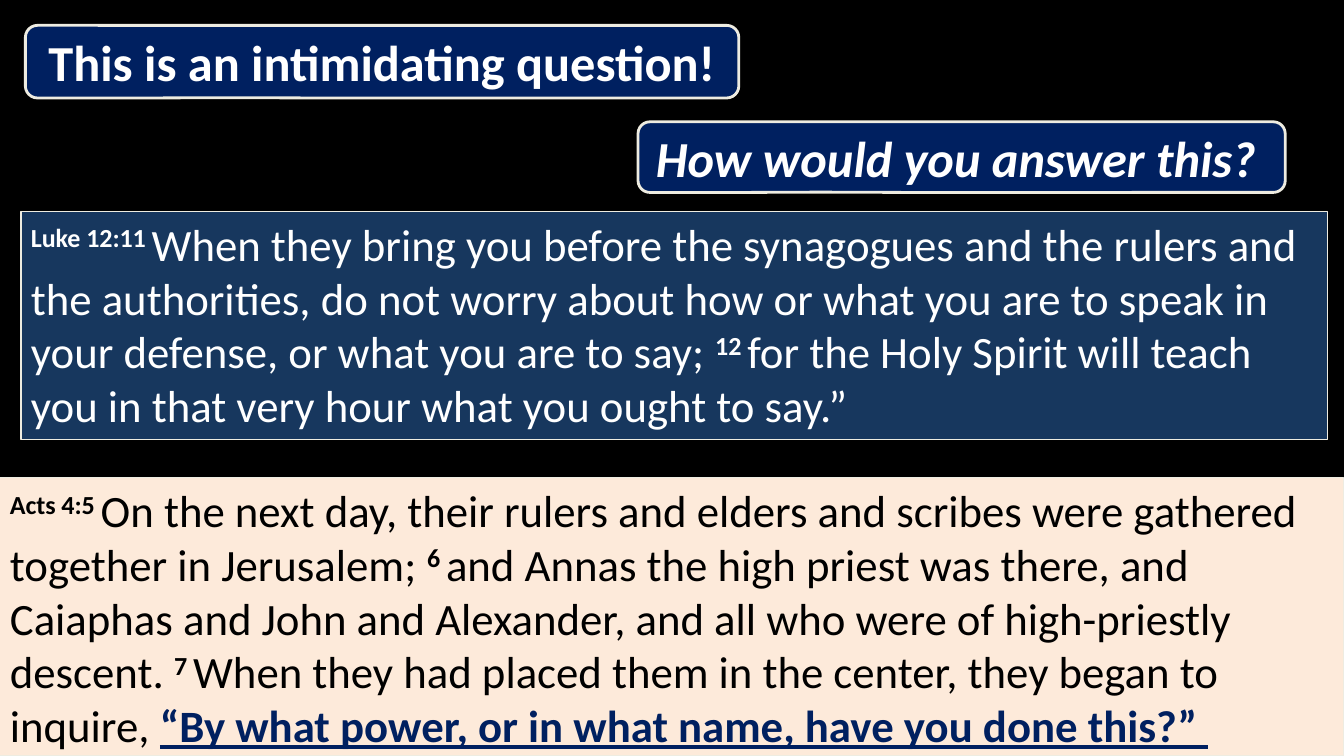
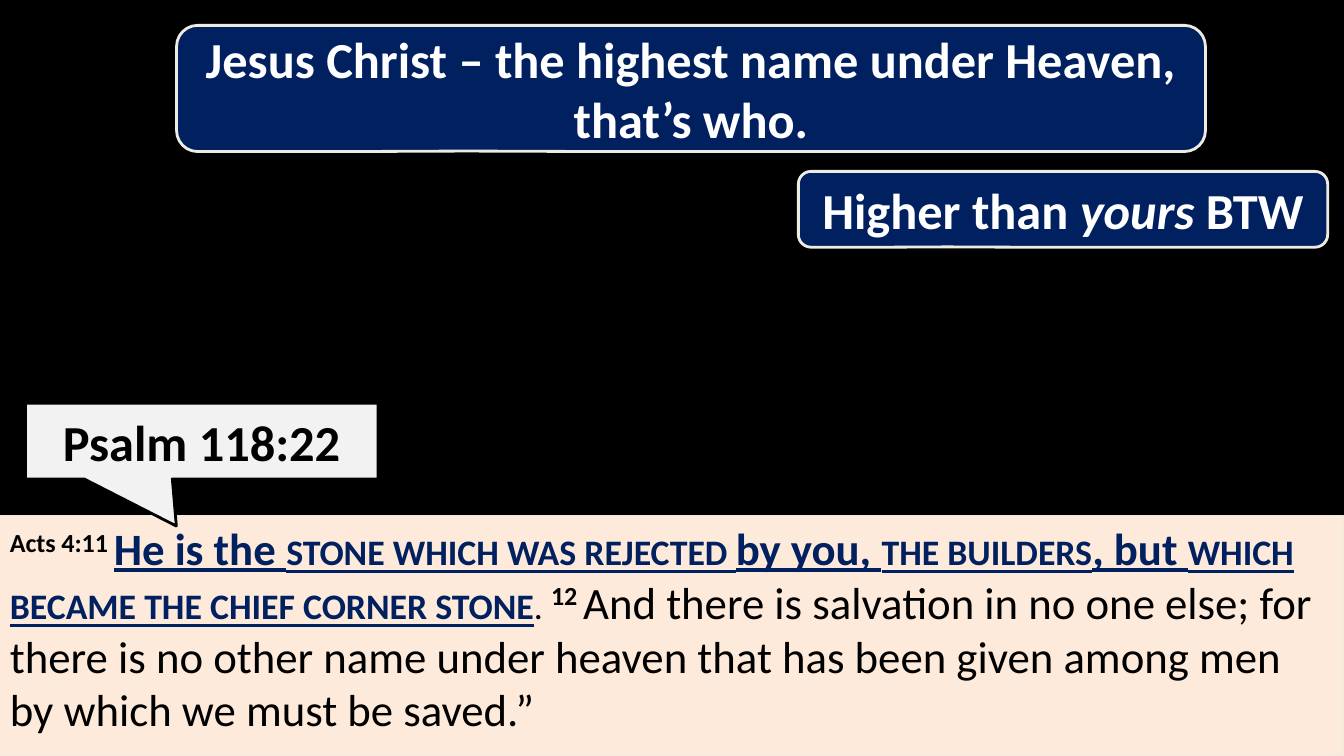
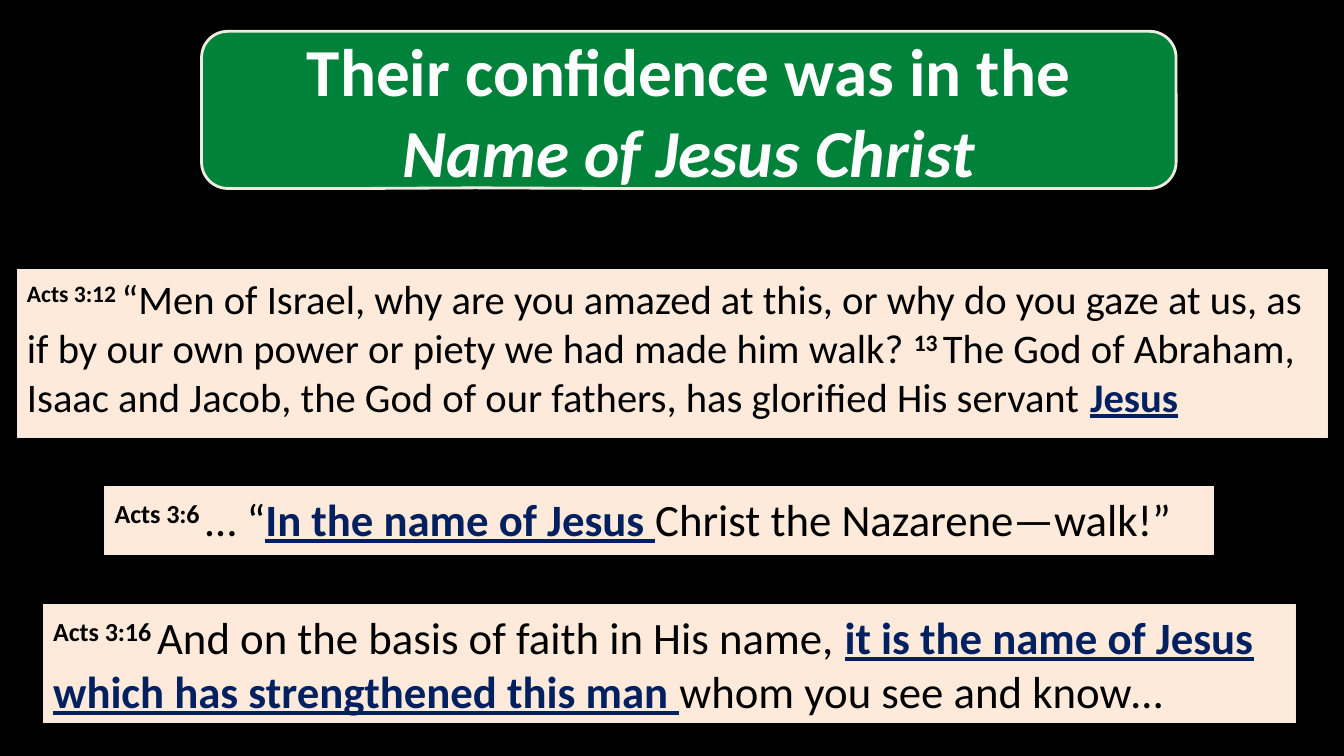
from dataclasses import dataclass
from typing import NamedTuple

from pptx import Presentation
from pptx.dml.color import RGBColor
from pptx.enum.shapes import MSO_SHAPE as Shape
from pptx.enum.text import MSO_ANCHOR as Anchor, PP_ALIGN as Align
from pptx.util import Cm, Pt


@dataclass(frozen=True)
class Theme:
    """Colours, type sizes and line widths shared by the slides."""
    font: str = "Calibri"
    black: str = "000000"
    white: str = "FFFFFF"
    cream: str = "FDEADA"
    edge: str = "EEECE1"
    navy: str = "002060"
    steel: str = "17375E"
    green: str = "00823B"
    pale: str = "F2F2F2"
    headline: int = 48
    banner: int = 36
    verse: int = 32
    long_verse: int = 29
    thin: float = 0.75
    thick: float = 2


class Box(NamedTuple):
    """Left, top, width and height in centimetres."""
    left: float
    top: float
    width: float
    height: float


THEME = Theme()
WIDTH, HEIGHT = 33.87, 19.05
BANNER_ADJUST = (-0.219, 0.496, 0.167)
NOTE_ADJUST = (-0.072, 1.121)


def add_panel(slide, kind, box, fill, edge, weight, adjust=()):
    """Add a filled, outlined shape and return it."""
    panel = slide.shapes.add_shape(kind, *(Cm(length) for length in box))
    panel.shadow.inherit = False
    panel.fill.solid()
    panel.fill.fore_color.rgb = RGBColor.from_string(fill)
    panel.line.color.rgb = RGBColor.from_string(edge)
    panel.line.width = Pt(weight)
    for index, value in enumerate(adjust):
        panel.adjustments[index] = value
    return panel


def start_text(panel, anchor, align, size, color):
    """Style the first paragraph of a panel and return it."""
    frame = panel.text_frame
    frame.word_wrap = True
    frame.vertical_anchor = anchor
    paragraph = frame.paragraphs[0]
    paragraph.alignment = align
    paragraph.font.name = THEME.font
    paragraph.font.size = Pt(size)
    paragraph.font.color.rgb = RGBColor.from_string(color)
    return paragraph


def add_verse(slide, box, parts, size=THEME.verse, fill=THEME.cream, color=THEME.black):
    """Place a scripture passage built from (role, text) parts."""
    panel = add_panel(slide, Shape.RECTANGLE, box, fill, THEME.edge, THEME.thin)
    passage = start_text(panel, Anchor.TOP, Align.LEFT, size, color)
    for role, text in parts:
        run = passage.add_run()
        run.text = text
        if role != "body":
            run.font.bold = role != "stop"
        if role == "ref":
            run._r.get_or_add_rPr().set("baseline", "30000")
        if role in ("key", "caps"):
            run.font.underline = True
            run.font.color.rgb = RGBColor.from_string(THEME.navy)
        if role in ("caps", "stop"):
            run._r.get_or_add_rPr().set("cap", "small")


def add_callout(slide, box, parts, size=THEME.banner, fill=THEME.navy, color=THEME.white,
                edge=THEME.edge, kind=Shape.ROUNDED_RECTANGULAR_CALLOUT, adjust=BANNER_ADJUST):
    """Place a bold centred callout built from (italic, text) parts."""
    panel = add_panel(slide, kind, box, fill, edge, THEME.thick, adjust)
    statement = start_text(panel, Anchor.MIDDLE, Align.CENTER, size, color)
    statement.font.bold = True
    for italic, text in parts:
        run = statement.add_run()
        run.text = text
        if italic:
            run.font.italic = True


def add_note(slide, box, text):
    """Place a pale square callout that points at the verse below."""
    add_callout(slide, box, [(False, text)], fill=THEME.pale, color=THEME.black,
                edge=THEME.black, kind=Shape.RECTANGULAR_CALLOUT, adjust=NOTE_ADJUST)


def foot_box(height):
    """Return a full-width box resting on the bottom edge."""
    return Box(0, HEIGHT - height, WIDTH, height)


def add_black_slide(deck):
    """Add a blank slide with a black background."""
    slide = deck.slides.add_slide(deck.slide_layouts[6])
    slide.background.fill.solid()
    slide.background.fill.fore_color.rgb = RGBColor.from_string(THEME.black)
    return slide


def build_question(deck):
    """Build the slide on the rulers' question."""
    slide = add_black_slide(deck)
    add_verse(slide, foot_box(7.01), [
        ("ref", "Acts 4:5 "),
        ("body", "On the next day, their rulers and elders and scribes were gathered "
                 "together in Jerusalem; "),
        ("ref", "6 "),
        ("body", "and Annas the high priest was there, and Caiaphas and John and Alexander, "
                 "and all who were of high-priestly descent. "),
        ("ref", "7 "),
        ("body", "When they had placed them in the center, they began to inquire, "),
        ("key", "“By what power, or in what name, have you done this?” "),
    ])
    add_callout(slide, Box(0.64, 0.64, 17.98, 1.83),
                [(False, "This is an intimidating question!")])
    add_callout(slide, Box(16.08, 3.07, 16.31, 1.78),
                [(True, "How would you answer this? ")])
    add_verse(slide, Box(0.53, 5.33, 32.92, 5.74), [
        ("ref", "Luke 12:11 "),
        ("body", "When they bring you before the synagogues and the rulers and the authorities, "
                 "do not worry about how or what you are to speak in your defense, "
                 "or what you are to say; "),
        ("ref", "12 "),
        ("body", "for the Holy Spirit will teach you in that very hour "
                 "what you ought to say.”"),
    ], fill=THEME.steel, color=THEME.white)


def build_answer(deck):
    """Build the slide on the highest name."""
    slide = add_black_slide(deck)
    add_verse(slide, foot_box(6.05), [
        ("ref", "Acts 4:11 "),
        ("key", "He is the "),
        ("caps", "stone which was rejected "),
        ("key", "by you, "),
        ("caps", "the builders"),
        ("key", ", but "),
        ("caps", "which became the chief corner stone"),
        ("stop", ". "),
        ("ref", "12 "),
        ("body", "And there is salvation in no one else; for there is no other name under "
                 "heaven that has been given among men by which we must be saved.”"),
    ])
    add_callout(slide, Box(4.45, 0.64, 25.93, 3.18),
                [(False, "Jesus Christ – the highest name under Heaven, that’s who.")])
    add_callout(slide, Box(20.12, 4.32, 13.34, 1.91),
                [(False, "Higher than "), (True, "yours"), (False, " BTW")])
    add_note(slide, Box(0.64, 10.16, 8.89, 1.91), "Psalm 118:22")


def build_confidence(deck):
    """Build the slide on confidence in the name of Jesus."""
    slide = add_black_slide(deck)
    add_verse(slide, Box(0.43, 6.78, 33.02, 4.24), [
        ("ref", "Acts 3:12 "),
        ("body", "“Men of Israel, why are you amazed at this, or why do you gaze at us, "
                 "as if by our own power or piety we had made him walk? "),
        ("ref", "13 "),
        ("body", "The God of Abraham, Isaac and Jacob, the God of our fathers, "
                 "has glorified His servant "),
        ("key", "Jesus"),
    ], size=THEME.long_verse)
    add_verse(slide, Box(1.09, 15.24, 31.55, 2.97), [
        ("ref", "Acts 3:16 "),
        ("body", "And on the basis of faith in His name, "),
        ("key", "it is the name of Jesus which has strengthened this man "),
        ("body", "whom you see and know…"),
    ])
    add_verse(slide, Box(2.64, 12.27, 27.94, 1.7), [
        ("ref", "Acts 3:6 "),
        ("body", "… “"),
        ("key", "In the name of Jesus "),
        ("body", "Christ the Nazarene—walk!”"),
    ])
    add_callout(slide, Box(5.08, 0.79, 24.56, 3.96),
                [(False, "Their confidence was in the "), (True, "Name of Jesus Christ")],
                size=THEME.headline, fill=THEME.green)


def main():
    """Build the three slides and save the deck."""
    deck = Presentation()
    deck.slide_width, deck.slide_height = Cm(WIDTH), Cm(HEIGHT)
    for build in (build_question, build_answer, build_confidence):
        build(deck)
    deck.save("out.pptx")


if __name__ == "__main__":
    main()
